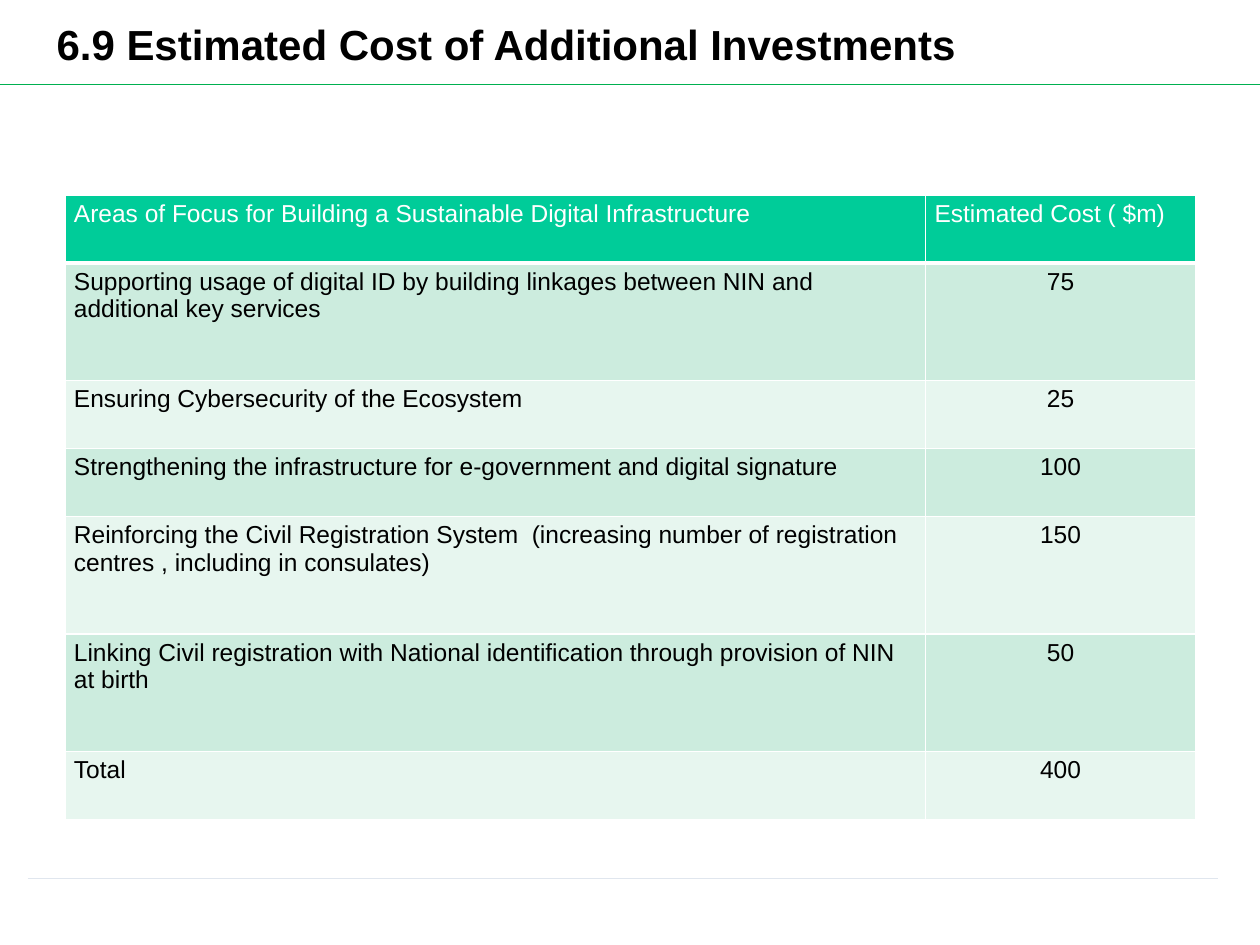
from lxml import etree
from pptx import Presentation
from pptx.dml.color import RGBColor
from pptx.enum.shapes import MSO_CONNECTOR
from pptx.enum.text import MSO_ANCHOR, PP_ALIGN
from pptx.oxml.ns import qn
from pptx.util import Cm, Pt

STRAIGHT = MSO_CONNECTOR.STRAIGHT
TOP = MSO_ANCHOR.TOP
LEFT = PP_ALIGN.LEFT
CENTER = PP_ALIGN.CENTER

COLORS = {
    "text": "000000",
    "white": "FFFFFF",
    "header": "00CC99",
    "odd_row": "CCECDE",
    "even_row": "E7F6EF",
    "title_rule": "00B050",
    "footer_rule": "E0E6EE",
}

HEADINGS = ("Areas of Focus for Building a Sustainable Digital Infrastructure",
            "Estimated Cost ( $m)")
SHORT_ROW, TALL_ROW = 1.37, 2.37
INVESTMENTS = [
    ("Supporting usage of digital ID by building linkages between NIN and "
     "additional key services", "75", TALL_ROW),
    ("Ensuring Cybersecurity of the Ecosystem", "25", SHORT_ROW),
    ("Strengthening the infrastructure for e-government and digital signature",
     "100", SHORT_ROW),
    ("Reinforcing the Civil Registration System  (increasing number of "
     "registration centres , including in consulates)", "150", TALL_ROW),
    ("Linking Civil registration with National identification through "
     "provision of NIN at birth", "50", TALL_ROW),
    ("Total", "400", SHORT_ROW),
]


class SlideBuilder:
    font = "Arial"

    def __init__(self, slide):
        self.slide = slide

    def color(self, name):
        return RGBColor.from_string(COLORS[name])

    def add_run(self, paragraph, text, size, color, bold=False):
        run = paragraph.add_run()
        run.text = text
        run.font.name = self.font
        run.font.size = Pt(size)
        run.font.bold = bold
        run.font.color.rgb = self.color(color)

    def rule(self, left, right, y, color, width):
        line = self.slide.shapes.add_connector(
            STRAIGHT, Cm(left), Cm(y), Cm(right), Cm(y))
        line.line.color.rgb = self.color(color)
        line.line.width = Pt(width)
        etree.SubElement(line._element.spPr, qn("a:effectLst"))

    def title(self, text, left, top, width, height):
        frame = self.slide.shapes.add_textbox(
            Cm(left), Cm(top), Cm(width), Cm(height)).text_frame
        frame.word_wrap = True
        frame.vertical_anchor = TOP
        heading = frame.paragraphs[0]
        heading.line_spacing = 0.93
        self.add_run(heading, text, 24, "text", bold=True)

    def borders(self, cell, bottom):
        properties = cell._tc.get_or_add_tcPr()
        for side, width in (("L", 1), ("R", 1), ("T", 1), ("B", bottom)):
            border = etree.SubElement(
                properties, qn(f"a:ln{side}"), w=str(Pt(width)))
            fill = etree.SubElement(border, qn("a:solidFill"))
            etree.SubElement(fill, qn("a:srgbClr"), val=COLORS["white"])

    def cell(self, cell, text, fill, color, align, bottom):
        cell.margin_left = cell.margin_right = Cm(0.18)
        cell.margin_top = cell.margin_bottom = Cm(0.1)
        cell.vertical_anchor = TOP
        self.borders(cell, bottom)
        cell.fill.solid()
        cell.fill.fore_color.rgb = self.color(fill)
        paragraph = cell.text_frame.paragraphs[0]
        paragraph.alignment = align
        self.add_run(paragraph, text, 14, color)

    def cost_table(self, headings, investments, left, top, widths):
        rows = [(*headings, SHORT_ROW), *investments]
        heights = [row[-1] for row in rows]
        table = self.slide.shapes.add_table(
            len(rows), len(widths), Cm(left), Cm(top),
            Cm(sum(widths)), Cm(sum(heights))).table
        for column, width in zip(table.columns, widths):
            column.width = Cm(width)
        for index, (area, cost, height) in enumerate(rows):
            table.rows[index].height = Cm(height)
            if index == 0:
                fill, color, cost_align, bottom = "header", "white", LEFT, 3
            else:
                fill = "odd_row" if index % 2 else "even_row"
                color, cost_align, bottom = "text", CENTER, 1
            self.cell(table.cell(index, 0), area, fill, color, LEFT, bottom)
            self.cell(table.cell(index, 1), cost, fill, color, cost_align, bottom)


def main():
    presentation = Presentation()
    presentation.slide_width = Cm(25.4)
    presentation.slide_height = Cm(19.05)
    builder = SlideBuilder(
        presentation.slides.add_slide(presentation.slide_layouts[6]))
    builder.rule(0, 25.4, 1.7, "title_rule", 0.75)
    builder.rule(0.56, 24.56, 17.7, "footer_rule", 0.25)
    builder.title("6.9 Estimated Cost of Additional Investments",
                  0.89, 0.33, 20.88, 1.52)
    builder.cost_table(HEADINGS, INVESTMENTS, 1.31, 3.93, (17.35, 5.44))
    presentation.save("out.pptx")


if __name__ == "__main__":
    main()
